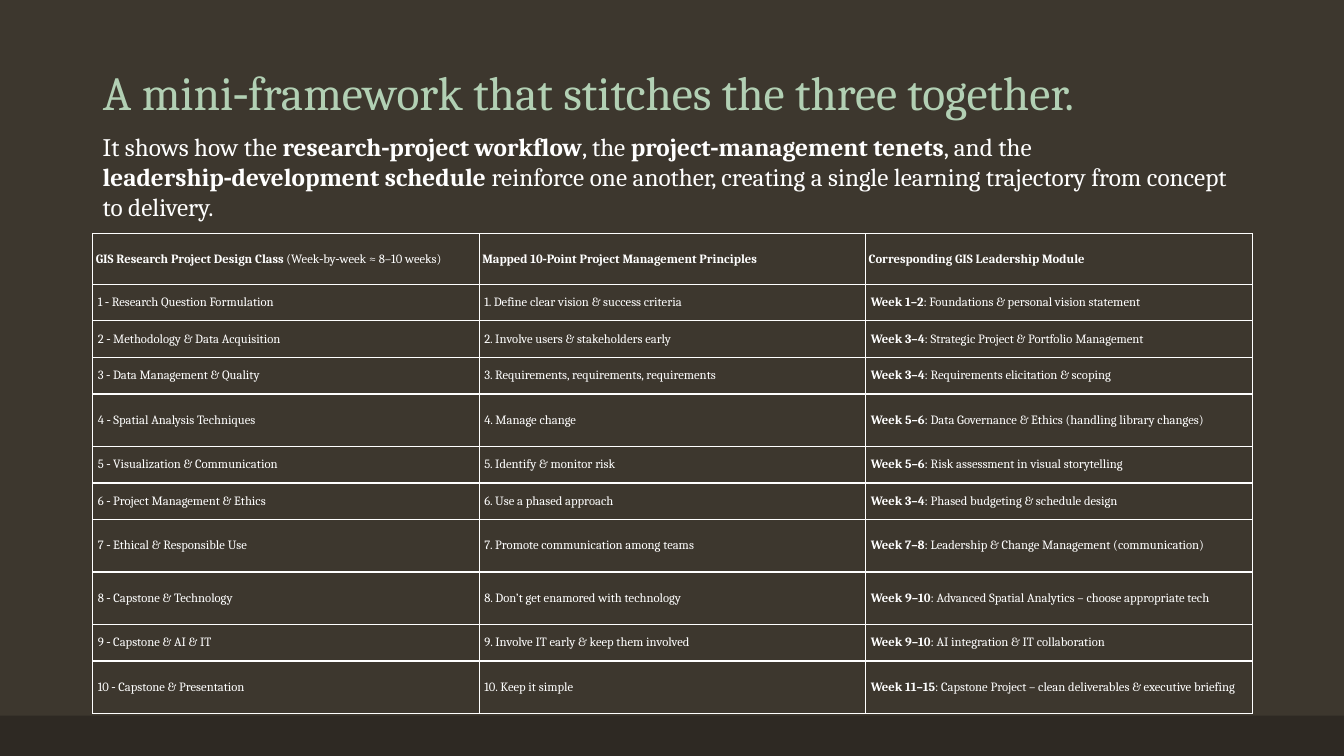
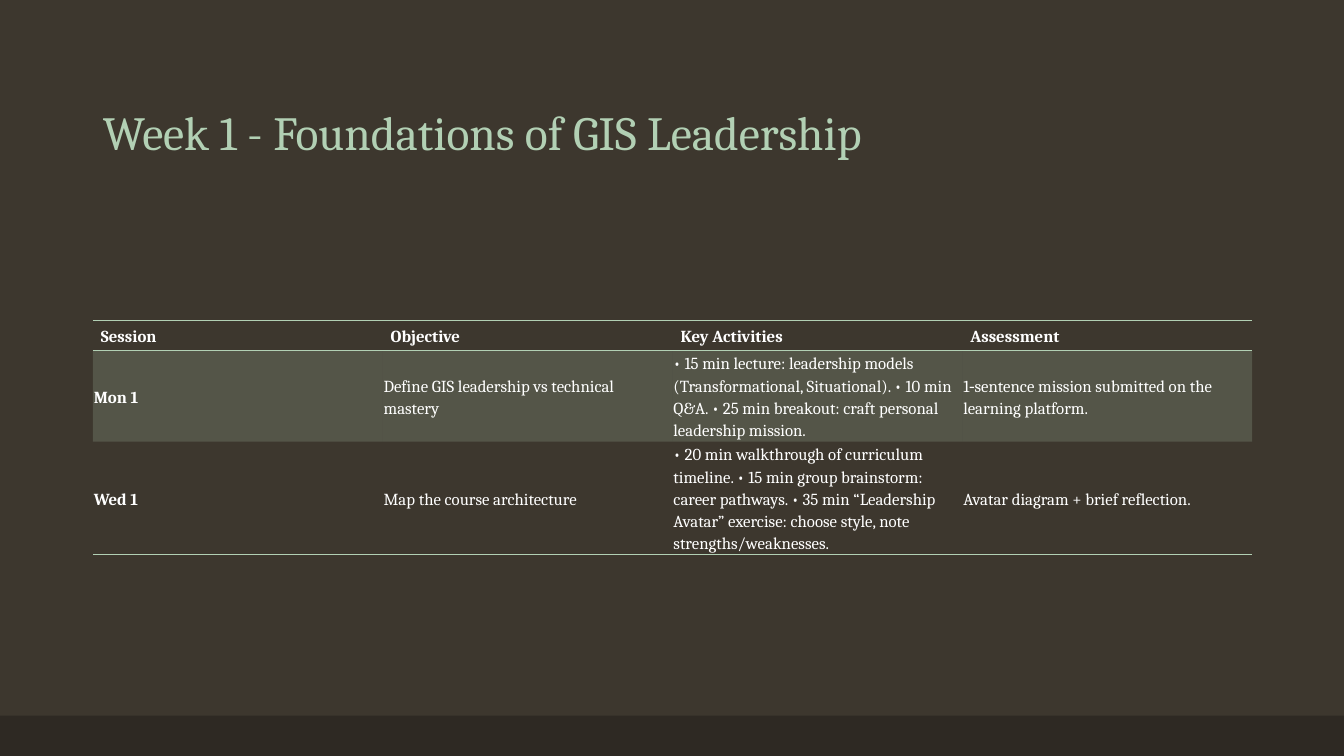
from lxml.etree import SubElement
from pptx import Presentation
from pptx.dml.color import RGBColor
from pptx.enum.shapes import MSO_SHAPE
from pptx.enum.text import MSO_ANCHOR, MSO_AUTO_SIZE, PP_ALIGN
from pptx.oxml.ns import qn
from pptx.util import Inches, Pt

COLORS = {
    "background": "3D372E",
    "band": "2E2923",
    "accent": "B2D0B4",
    "text": "FFFFFF",
}
FONT = "Cambria"
PLAIN_TABLE_STYLE = "{2D5ABB26-0587-4C30-8999-92F81FD0307C}"
SIDES = {"left": "a:lnL", "right": "a:lnR", "top": "a:lnT", "bottom": "a:lnB"}

# Page grid, in inches
WIDTH, HEIGHT = 13.33, 7.5
BAND_HEIGHT = 0.4
MARGIN, CONTENT_WIDTH = 0.92, 11.5
TITLE_TOP = 0.4

# Text between double asterisks is bold
INTRO = (
    "It shows how the **research‑project workflow**, the **project‑management tenets**, "
    "and the **leadership‑development schedule** reinforce one another, "
    "creating a single learning trajectory from concept to delivery."
)
FRAMEWORK = [
    ("**GIS Research Project Design Class** (Week‑by‑week ≈ 8–10 weeks)",
     "**Mapped 10‑Point Project Management Principles**",
     "**Corresponding GIS Leadership Module**"),
    ("1 ‑ Research Question Formulation",
     "1. Define clear vision & success criteria",
     "**Week 1–2**: Foundations & personal vision statement"),
    ("2 ‑ Methodology & Data Acquisition",
     "2. Involve users & stakeholders early",
     "**Week 3–4**: Strategic Project & Portfolio Management"),
    ("3 ‑ Data Management & Quality",
     "3. Requirements, requirements, requirements",
     "**Week 3–4**: Requirements elicitation & scoping"),
    ("4 ‑ Spatial Analysis Techniques",
     "4. Manage change",
     "**Week 5–6**: Data Governance & Ethics (handling library changes)"),
    ("5 ‑ Visualization & Communication",
     "5. Identify & monitor risk",
     "**Week 5–6**: Risk assessment in visual storytelling"),
    ("6 ‑ Project Management & Ethics",
     "6. Use a phased approach",
     "**Week 3–4**: Phased budgeting & schedule design"),
    ("7 ‑ Ethical & Responsible Use",
     "7. Promote communication among teams",
     "**Week 7–8**: Leadership & Change Management (communication)"),
    ("8 ‑ Capstone & Technology",
     "8. Don’t get enamored with technology",
     "**Week 9–10**: Advanced Spatial Analytics – choose appropriate tech"),
    ("9 ‑ Capstone & AI & IT",
     "9. Involve IT early & keep them involved",
     "**Week 9–10**: AI integration & IT collaboration"),
    ("10 ‑ Capstone & Presentation",
     "10. Keep it simple",
     "**Week 11–15**: Capstone Project – clean deliverables & executive briefing"),
]
TALL_ROWS = {4, 7, 8, 10}
SESSIONS = [
    ("**Session**", "**Objective**", "**Key Activities**", "**Assessment**"),
    ("**Mon 1**",
     "Define GIS leadership vs technical mastery",
     "• 15 min lecture: leadership models (Transformational, Situational). "
     "• 10 min Q&A. • 25 min breakout: craft personal leadership mission.",
     "1‑sentence mission submitted on the learning platform."),
    ("**Wed 1**",
     "Map the course architecture",
     "• 20 min walkthrough of curriculum timeline. "
     "• 15 min group brainstorm: career pathways. "
     "• 35 min “Leadership Avatar” exercise: choose style, note strengths/weaknesses.",
     "Avatar diagram + brief reflection."),
]


def color(name):
    return RGBColor.from_string(COLORS[name])


def format_run(run, size, color_name, bold=False):
    run.font.name = FONT
    run.font.size = Pt(size)
    run.font.bold = bold
    run.font.color.rgb = color(color_name)


def write_rich_text(paragraph, text, size):
    """Write text in which every second ** part is bold."""
    for index, part in enumerate(text.split("**")):
        if part:
            run = paragraph.add_run()
            run.text = part
            format_run(run, size, "text", bold=index % 2 == 1)


def place(shape, left, top, width, height):
    shape.left, shape.top = Inches(left), Inches(top)
    shape.width, shape.height = Inches(width), Inches(height)


def style_master(presentation, slide):
    """Give the master its background and bottom band."""
    master = presentation.slide_master
    master.background.fill.solid()
    master.background.fill.fore_color.rgb = color("background")
    band = slide.shapes.add_shape(MSO_SHAPE.RECTANGLE, 0, 0, 0, 0)
    place(band, 0, HEIGHT - BAND_HEIGHT, WIDTH, BAND_HEIGHT)
    band.shadow.inherit = False
    band.fill.solid()
    band.fill.fore_color.rgb = color("band")
    band.line.fill.background()
    master.shapes.element.insert(2, band.element)


def add_titled_slide(presentation, title, title_height):
    slide = presentation.slides.add_slide(presentation.slide_layouts[5])
    shape = slide.shapes.title
    place(shape, MARGIN, TITLE_TOP, CONTENT_WIDTH, title_height)
    text_frame = shape.text_frame
    text_frame.text = title
    text_frame.word_wrap = True
    text_frame.auto_size = MSO_AUTO_SIZE.NONE
    text_frame.vertical_anchor = MSO_ANCHOR.BOTTOM
    paragraph = text_frame.paragraphs[0]
    paragraph.alignment = PP_ALIGN.LEFT
    paragraph.line_spacing = 0.9
    format_run(paragraph.runs[0], 34, "accent")
    return slide


def add_intro(slide, text, top, height):
    box = slide.shapes.add_textbox(0, 0, 0, 0)
    place(box, MARGIN, top, CONTENT_WIDTH, height)
    box.text_frame.word_wrap = True
    box.text_frame.auto_size = MSO_AUTO_SIZE.SHAPE_TO_FIT_TEXT
    write_rich_text(box.text_frame.paragraphs[0], text, 18)


def set_borders(cell, sides, color_name):
    """Draw a 1 pt line on the named sides and none on the others."""
    properties = cell._tc.get_or_add_tcPr()
    for side, tag in SIDES.items():
        line = SubElement(properties, qn(tag), w=str(Pt(1)))
        if side in sides:
            fill = SubElement(line, qn("a:solidFill"))
            SubElement(fill, qn("a:srgbClr"), val=COLORS[color_name])
        else:
            SubElement(line, qn("a:noFill"))


def tint(cell, color_name, percent):
    cell.fill.solid()
    cell.fill.fore_color.rgb = color(color_name)
    for value in cell._tc.tcPr.findall(qn("a:solidFill") + "/" + qn("a:srgbClr")):
        SubElement(value, qn("a:alpha"), val=str(percent * 1000))


def fill_cell(cell, text, size, insets):
    horizontal, vertical = (Inches(inset) for inset in insets)
    cell.margin_left = cell.margin_right = horizontal
    cell.margin_top = cell.margin_bottom = vertical
    cell.vertical_anchor = MSO_ANCHOR.MIDDLE
    write_rich_text(cell.text_frame.paragraphs[0], text, size)


def add_plain_table(slide, rows, top, heights, size, header_insets, body_insets):
    """Add an unstyled table with equal columns across the content width."""
    columns = len(rows[0])
    frame = slide.shapes.add_table(
        len(rows), columns, Inches(MARGIN), Inches(top),
        Inches(CONTENT_WIDTH), Inches(sum(heights)))
    for style in frame.element.iter(qn("a:tableStyleId")):
        style.text = PLAIN_TABLE_STYLE
    table = frame.table
    table.horz_banding = False
    for column in table.columns:
        column.width = Inches(CONTENT_WIDTH / columns)
    for row_index, texts in enumerate(rows):
        table.rows[row_index].height = Inches(heights[row_index])
        insets = body_insets if row_index else header_insets
        for column_index, text in enumerate(texts):
            cell = table.cell(row_index, column_index)
            fill_cell(cell, text, size, insets)
            cell.fill.background()
    return table


def add_framework_table(slide):
    header, tall, total = 0.5, 0.52, 4.76
    short_count = len(FRAMEWORK) - 1 - len(TALL_ROWS)
    short = (total - header - tall * len(TALL_ROWS)) / short_count
    heights = [header] + [
        tall if row in TALL_ROWS else short for row in range(1, len(FRAMEWORK))]
    table = add_plain_table(
        slide, FRAMEWORK, 2.32, heights, 9, (0.03, 0.01), (0.05, 0.03))
    for cell in table.iter_cells():
        cell.fill.background()
        fill = cell._tc.tcPr.find(qn("a:noFill"))
        set_borders(cell, SIDES, "text")
        cell._tc.tcPr.append(fill)


def add_session_table(slide):
    table = add_plain_table(
        slide, SESSIONS, 3.18, [0.3, 0.9, 1.12], 12, (0.08, 0.04), (0.01, 0.01))
    row_borders = [("top", "bottom"), ("top",), ("bottom",)]
    for row_index, row in enumerate(table.rows):
        for cell in row.cells:
            paragraph = cell.text_frame.paragraphs[0]
            paragraph.line_spacing = 1.15
            paragraph.space_after = Pt(8)
            fill = cell._tc.tcPr.find(qn("a:noFill"))
            set_borders(cell, row_borders[row_index], "accent")
            cell._tc.tcPr.append(fill)
            if row_index == 1:
                tint(cell, "accent", 20)


def main():
    presentation = Presentation()
    presentation.slide_width = Inches(WIDTH)
    presentation.slide_height = Inches(HEIGHT)

    # Framework slide
    framework = add_titled_slide(
        presentation, "A mini‑framework that stitches the three together.", 0.85)
    style_master(presentation, framework)
    add_intro(framework, INTRO, 1.25, 1.01)
    add_framework_table(framework)

    # Week 1 slide
    week = add_titled_slide(presentation, "Week 1 - Foundations of GIS Leadership", 1.25)
    add_session_table(week)

    presentation.save("out.pptx")


if __name__ == "__main__":
    main()
